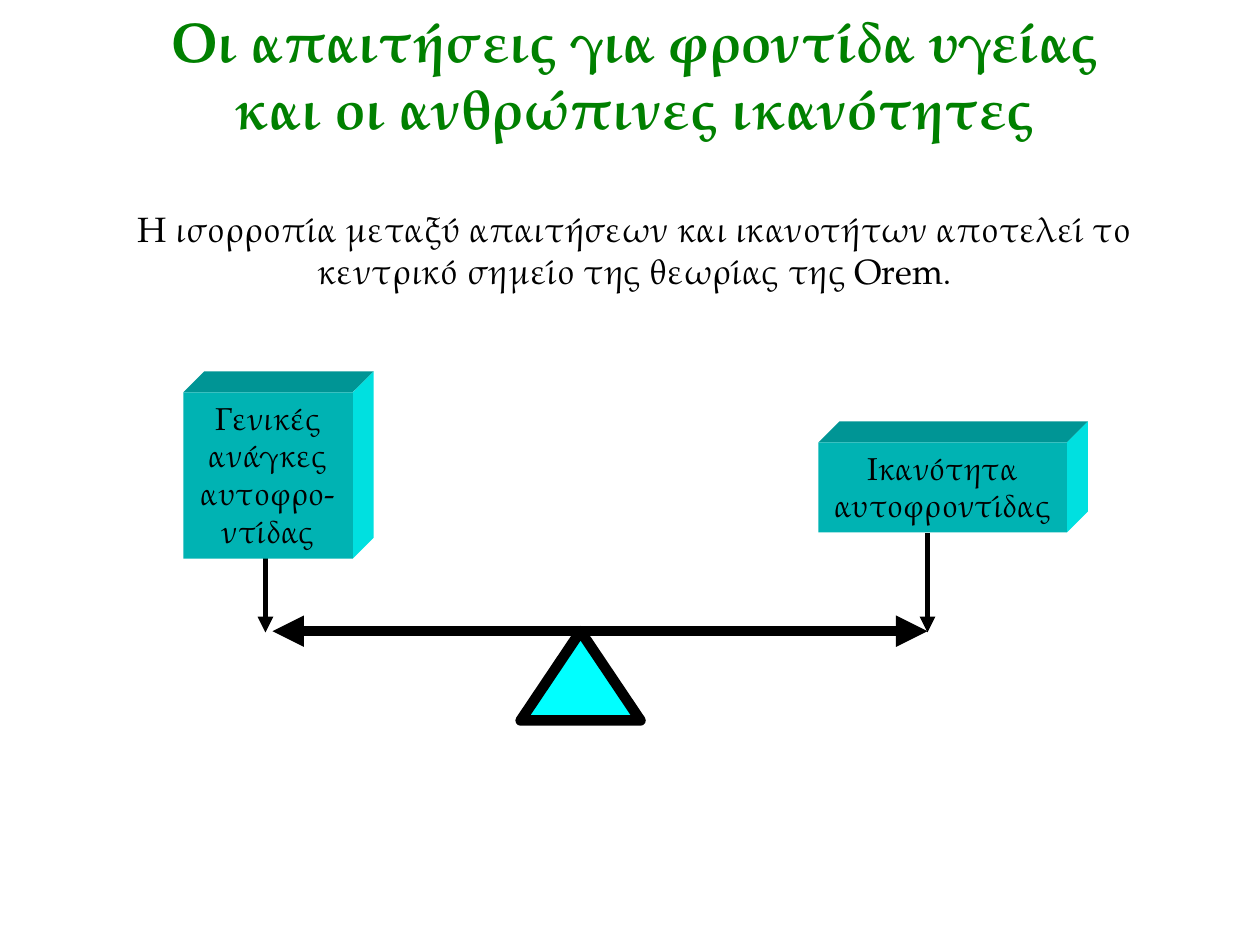
from dataclasses import dataclass

from lxml import etree
from pptx import Presentation
from pptx.dml.color import RGBColor
from pptx.enum.shapes import MSO_CONNECTOR, MSO_SHAPE
from pptx.enum.text import MSO_ANCHOR, MSO_AUTO_SIZE, PP_ALIGN
from pptx.oxml.ns import qn
from pptx.util import Pt


@dataclass(frozen=True)
class Theme:
    font: str = "TeX Gyre Pagella"
    title_color: str = "008000"
    ink: str = "000000"
    fulcrum: str = "00FFFF"
    front: str = "00B3B3"
    top: str = "009595"
    side: str = "00E0E0"
    title_size: float = 32
    body_size: float = 20
    label_size: float = 18
    heavy_line: float = 6
    thin_line: float = 3
    depth: float = 12


THEME = Theme()


def set_attributes(target, values):
    for name, value in values.items():
        setattr(target, name, value)


def place(shape, left, top, width, height):
    box = {"left": left, "top": top, "width": width, "height": height}
    set_attributes(shape, {name: Pt(value) for name, value in box.items()})


def paint(shape, color):
    shape.shadow.inherit = False
    shape.fill.solid()
    shape.fill.fore_color.rgb = RGBColor.from_string(color)
    shape.line.fill.background()


def write(shape, runs, color=THEME.ink, bold=False, anchor=MSO_ANCHOR.TOP):
    frame = shape.text_frame
    set_attributes(frame, {
        "word_wrap": True, "auto_size": MSO_AUTO_SIZE.NONE, "vertical_anchor": anchor,
        "margin_left": Pt(7.2), "margin_right": Pt(7.2),
        "margin_top": Pt(3.6), "margin_bottom": Pt(3.6),
    })
    paragraph = frame.paragraphs[0]
    properties = paragraph._p.get_or_add_pPr()
    properties.set("marL", "0")
    properties.set("indent", "0")
    etree.SubElement(properties, qn("a:buNone"))
    set_attributes(paragraph, {"alignment": PP_ALIGN.CENTER, "space_before": Pt(0)})
    for text, size in runs:
        run = paragraph.add_run()
        run.text = text
        set_attributes(run.font, {"name": THEME.font, "size": Pt(size), "bold": bold})
        run.font.color.rgb = RGBColor.from_string(color)


def add_face(slide, points, color):
    start, *rest = [(Pt(x), Pt(y)) for x, y in points]
    builder = slide.shapes.build_freeform(*start)
    builder.add_line_segments(rest, close=True)
    paint(builder.convert_to_shape(), color)


def add_block(slide, text, left, top, width, height):
    right, bottom, depth = left + width, top + height, THEME.depth
    back_corner = (right + depth, top - depth)
    add_face(slide, [(left, top), (left + depth, top - depth), back_corner, (right, top)],
             THEME.top)
    add_face(slide, [(right, top), back_corner, (right + depth, bottom - depth),
                     (right, bottom)], THEME.side)
    front = slide.shapes.add_shape(MSO_SHAPE.RECTANGLE, 0, 0, 0, 0)
    place(front, left, top, width, height)
    paint(front, THEME.front)
    write(front, [(text, THEME.label_size)])


def add_arrow(slide, start, end, width, ends=("tailEnd",)):
    points = [Pt(value) for value in (*start, *end)]
    arrow = slide.shapes.add_connector(MSO_CONNECTOR.STRAIGHT, *points)
    arrow.line.width = Pt(width)
    arrow.line.color.rgb = RGBColor.from_string(THEME.ink)
    line = arrow.line._get_or_add_ln()
    for end_name in ends:
        etree.SubElement(line, qn(f"a:{end_name}"), type="triangle")
    etree.SubElement(arrow._element.spPr, qn("a:effectLst"))


def add_fulcrum(slide, left, top, width, height):
    triangle = slide.shapes.add_shape(MSO_SHAPE.ISOSCELES_TRIANGLE, 0, 0, 0, 0)
    place(triangle, left, top, width, height)
    paint(triangle, THEME.fulcrum)
    triangle.line.width = Pt(THEME.heavy_line)
    triangle.line.color.rgb = RGBColor.from_string(THEME.ink)


def main():
    presentation = Presentation()
    set_attributes(presentation, {"slide_width": Pt(720), "slide_height": Pt(540)})
    slide = presentation.slides.add_slide(presentation.slide_layouts[1])
    title, body = slide.placeholders

    place(title, 70.6, 0, 584, 84)
    write(title, [("Οι απαιτήσεις για φροντίδα υγείας και οι ανθρώπινες ικανότητες",
                   THEME.title_size)], THEME.title_color, bold=True)
    place(body, 70.6, 115.2, 584, 56)
    write(body, [("Η ισορροπία μεταξύ απαιτήσεων και ικανοτήτων αποτελεί το κεντρικό "
                  "σημείο της θεωρίας της Orem", THEME.body_size), (".", THEME.label_size)])

    beam_y, beam_left, beam_right = 360.7, 155.7, 530
    add_fulcrum(slide, 297.5, beam_y, 68.5, 51)
    add_arrow(slide, (beam_left, beam_y), (beam_right, beam_y), THEME.heavy_line,
              ("headEnd", "tailEnd"))
    for x in (151.7, beam_right):
        add_arrow(slide, (x, 304.5), (x, beam_y + 0.7), THEME.thin_line)
    add_block(slide, "Γενικές ανάγκες αυτοφρο-ντίδας", 104.8, 224.2, 96.8, 95)
    add_block(slide, "Ικανότητα αυτοφροντίδας", 467.7, 252.8, 142, 51.5)

    presentation.save("out.pptx")


if __name__ == "__main__":
    main()
